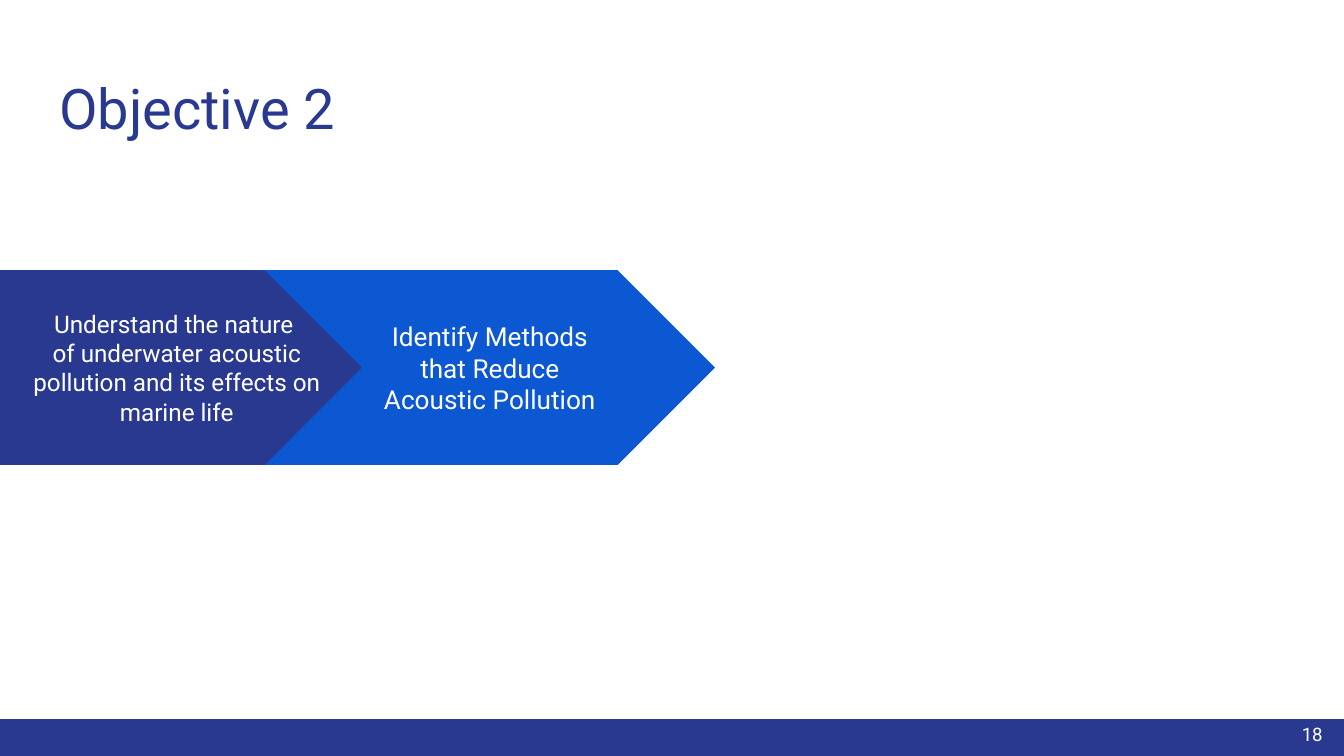
from dataclasses import dataclass

import pptx
import pptx.dml.color
import pptx.enum.shapes
import pptx.enum.text
import pptx.util

Inches = pptx.util.Inches
MSO_SHAPE = pptx.enum.shapes.MSO_SHAPE
PP_ALIGN = pptx.enum.text.PP_ALIGN
MSO_ANCHOR = pptx.enum.text.MSO_ANCHOR


@dataclass(frozen=True)
class Theme:
    font: str = "Roboto"
    navy: str = "2A3990"
    blue: str = "0C58D3"
    white: str = "FFFFFF"
    title_size: int = 30
    first_step_size: int = 13
    second_step_size: int = 14
    number_size: int = 10


THEME = Theme()
SLIDE_WIDTH = 10
SLIDE_HEIGHT = SLIDE_WIDTH * 9 / 16
FOOTER_TOP = 5.35
STEP_TOP, STEP_HEIGHT = 2.01, 1.45


def rgb(color):
    return pptx.dml.color.RGBColor.from_string(color)


def write_text(frame, lines, size, color, align, anchor):
    """Fill a text frame with one paragraph per line."""
    frame.word_wrap = True
    frame.auto_size = pptx.enum.text.MSO_AUTO_SIZE.NONE
    frame.vertical_anchor = anchor
    frame.margin_left = frame.margin_right = Inches(0.1)
    frame.margin_top = frame.margin_bottom = Inches(0.1)
    for index, line in enumerate(lines):
        paragraph = frame.add_paragraph() if index else frame.paragraphs[0]
        paragraph.alignment = align
        run = paragraph.add_run()
        run.text = line
        run.font.name = THEME.font
        run.font.size = pptx.util.Pt(size)
        run.font.color.rgb = rgb(color)


def add_block(slide, kind, left, top, width, height, color):
    """Add a flat filled shape without outline or shadow."""
    block = slide.shapes.add_shape(
        kind, Inches(left), Inches(top), Inches(width), Inches(height))
    block.shadow.inherit = False
    block.fill.solid()
    block.fill.fore_color.rgb = rgb(color)
    block.line.fill.background()
    return block


def add_step(slide, kind, left, width, color, lines, size):
    """Add one arrow of the objectives chain."""
    step = add_block(slide, kind, left, STEP_TOP, width, STEP_HEIGHT, color)
    step.adjustments[0] = 0.5
    write_text(step.text_frame, lines, size, THEME.white,
               PP_ALIGN.CENTER, MSO_ANCHOR.MIDDLE)


def add_title(slide, text):
    title = slide.shapes.title
    title.left, title.top = Inches(0.34), Inches(0.45)
    title.width, title.height = Inches(9.32), Inches(0.66)
    write_text(title.text_frame, [text], THEME.title_size, THEME.navy,
               PP_ALIGN.LEFT, MSO_ANCHOR.TOP)


def add_page_number(slide, number):
    page_number = slide.shapes.add_textbox(
        Inches(9.34), Inches(5.25), Inches(0.6), Inches(0.43))
    write_text(page_number.text_frame, [number], THEME.number_size,
               THEME.white, PP_ALIGN.RIGHT, MSO_ANCHOR.MIDDLE)


def main():
    deck = pptx.Presentation()
    deck.slide_width = Inches(SLIDE_WIDTH)
    deck.slide_height = Inches(SLIDE_HEIGHT)
    slide = deck.slides.add_slide(deck.slide_layouts[5])  # Title Only
    slide.background.fill.solid()
    slide.background.fill.fore_color.rgb = rgb(THEME.white)

    # Footer band and title
    add_block(slide, MSO_SHAPE.RECTANGLE, 0, FOOTER_TOP, SLIDE_WIDTH,
              SLIDE_HEIGHT - FOOTER_TOP, THEME.navy)
    add_title(slide, "Objective 2")

    # Objectives chain
    add_step(slide, MSO_SHAPE.PENTAGON, 0, 2.99, THEME.navy,
             ["Understand the nature ",
              "of underwater acoustic pollution and its effects on marine life"],
             THEME.first_step_size)
    add_step(slide, MSO_SHAPE.CHEVRON, 1.97, 3.35, THEME.blue,
             ["Identify Methods that Reduce", "Acoustic Pollution"],
             THEME.second_step_size)

    # Page number
    add_page_number(slide, "18")

    deck.save("out.pptx")


if __name__ == "__main__":
    main()
